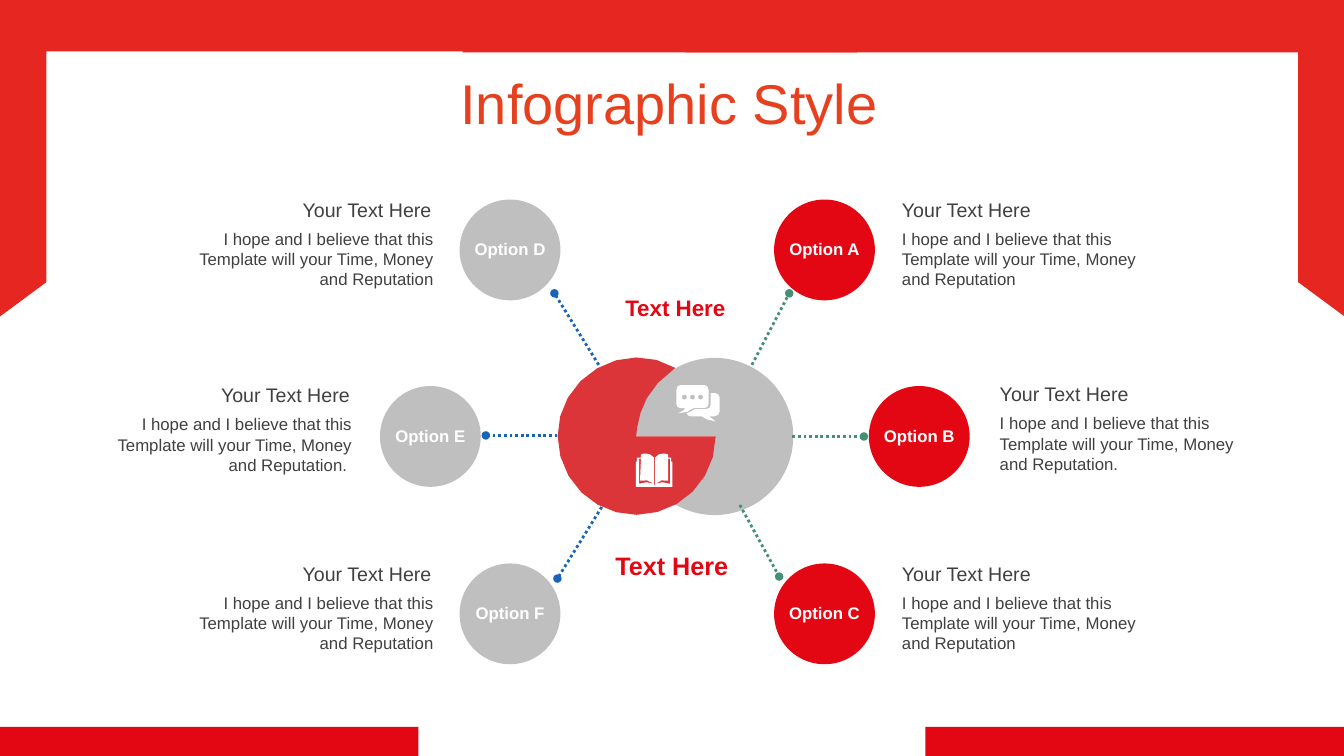
from lxml.etree import SubElement
from pptx import Presentation
from pptx.dml.color import RGBColor
from pptx.enum.dml import MSO_LINE
from pptx.enum.shapes import MSO_CONNECTOR, MSO_SHAPE
from pptx.enum.text import MSO_ANCHOR, MSO_AUTO_SIZE, PP_ALIGN
from pptx.oxml.ns import qn
from pptx.util import Pt

PX = 9144  # EMU per px, 100 px to the inch
COLORS = {
    "frame": "E52621", "accent": "E30613", "title": "E7401E", "swirl": "DC3539",
    "gray": "BFBFBF", "text": "404040", "white": "FFFFFF",
    "blue": "1764B9", "green": "449074",
}
LEFT, CENTER, RIGHT = PP_ALIGN.LEFT, PP_ALIGN.CENTER, PP_ALIGN.RIGHT


def flatten(contour, curve_steps):
    """Turn points (x, y) and cubic curves (x1, y1, x2, y2, x, y) into points."""
    points = []
    for step in contour:
        if len(step) == 2:
            points.append(step)
            continue
        nodes = [points[-1], step[:2], step[2:4], step[4:]]
        for i in range(1, curve_steps + 1):
            t = i / curve_steps
            weights = ((1 - t) ** 3, 3 * t * (1 - t) ** 2, 3 * t * t * (1 - t), t ** 3)
            points.append(tuple(sum(w * node[axis] for w, node in zip(weights, nodes))
                                for axis in (0, 1)))
    return [(x * PX, y * PX) for x, y in points]


class SlideBuilder:
    font = "Arial"

    def __init__(self, slide):
        self.slide = slide

    def color(self, name):
        return RGBColor.from_string(COLORS[name])

    def paint(self, shape, fill):
        shape.shadow.inherit = False
        shape.fill.solid()
        shape.fill.fore_color.rgb = self.color(fill)
        shape.line.fill.background()
        return shape

    def preset(self, kind, x, y, width, height, fill):
        box = (v * PX for v in (x, y, width, height))
        return self.paint(self.slide.shapes.add_shape(kind, *box), fill)

    def outline(self, contours, fill, curve_steps=2):
        first, *rest = [flatten(contour, curve_steps) for contour in contours]
        builder = self.slide.shapes.build_freeform(*first[0], scale=1.0)
        builder.add_line_segments(first[1:], close=True)
        for points in rest:
            builder.move_to(*points[0])
            builder.add_line_segments(points[1:], close=True)
        return self.paint(builder.convert_to_shape(), fill)

    def text(self, words, x, y, width, height, size, color, align=LEFT,
             bold=False, group=None):
        parent = group or self.slide
        box = parent.shapes.add_textbox(*(v * PX for v in (x, y, width, height)))
        frame = box.text_frame
        frame.word_wrap = True
        frame.auto_size = MSO_AUTO_SIZE.SHAPE_TO_FIT_TEXT
        paragraph = frame.paragraphs[0]
        paragraph.alignment = align
        run = paragraph.add_run()
        run.text = words
        run.font.name, run.font.size, run.font.bold = self.font, Pt(size), bold
        run.font.color.rgb = self.color(color)
        return frame

    def dotted_line(self, x1, y1, x2, y2, color):
        ends = (v * PX for v in (x1, y1, x2, y2))
        link = self.slide.shapes.add_connector(MSO_CONNECTOR.STRAIGHT, *ends)
        link.line.color.rgb = self.color(color)
        link.line.width = Pt(2)
        link.line.dash_style = MSO_LINE.ROUND_DOT
        properties = link.element.spPr
        SubElement(properties.find(qn("a:ln")), qn("a:tailEnd"), type="oval")
        SubElement(properties, qn("a:effectLst"))

    def option(self, letter, x, y, fill):
        self.preset(MSO_SHAPE.OVAL, x, y, 100, 100, fill)
        self.text(f"Option {letter}", x + 3, y + 34, 94, 30, 12, "white", CENTER, True)

    def note(self, x, y, width, body_gap, ending, align):
        group = self.slide.shapes.add_group_shape()
        body = "I hope and I believe that this Template will your Time, Money and Reputation"
        self.text(body + ending, x, y + body_gap, width, 71, 12, "text", align, group=group)
        self.text("Your Text Here", x, y, width - 2, 34, 14, "text", align, group=group)


# Circle: letter, x, y, colour; then its note: x, y, width, gap to body, ending, alignment
OPTIONS = [
    (("A", 768, 198, "accent"), (885, 191, 258, 31, "", LEFT)),
    (("B", 862, 383, "accent"), (982, 374, 256, 31, ".", LEFT)),
    (("C", 768, 559, "accent"), (885, 553, 258, 30, "", LEFT)),
    (("D", 456, 198, "gray"), (182, 191, 258, 31, "", RIGHT)),
    (("E", 377, 383, "gray"), (103, 375, 256, 31, ". ", RIGHT)),
    (("F", 456, 559, "gray"), (182, 553, 258, 30, "", RIGHT)),
]
LINKS = [
    (594, 362, 550, 291, "blue"), (553, 432, 482, 432, "blue"), (597, 503, 553, 574, "blue"),
    (746, 362, 783, 291, "green"), (786, 433, 857, 433, "green"), (734, 501, 773, 572, "green"),
]
RED_SWIRL = [
    (710, 433), (710, 468, 686, 499, 652, 508), (618, 517, 582, 503, 564, 472),
    (546, 441, 551, 403, 576, 378), (601, 353, 640, 347, 670, 365),
    (635, 389, 633, 418, 631, 433),
]
BOOK = [
    (649, 481), (650, 481), (650, 480), (656, 479, 658, 477, 665, 480), (665, 455),
    (663, 455), (663, 477), (659, 475, 654, 477, 650, 480), (650, 454),
    (652, 451, 655, 450, 658, 450), (659, 450, 661, 450, 663, 451), (663, 454),
    (666, 454), (666, 458), (667, 458), (667, 483), (631, 483), (631, 458), (632, 458),
    (632, 454), (636, 454), (636, 451), (637, 450, 639, 450, 641, 450),
    (644, 450, 646, 451, 649, 454), (649, 480), (644, 477, 640, 475, 635, 477),
    (636, 455), (634, 455), (634, 480), (640, 477, 643, 479, 649, 480),
]
BACK_BUBBLE = [
    (705, 390), (709, 390), (712, 390, 714, 392, 714, 394), (714, 408),
    (714, 411, 712, 413, 709, 413), (704, 413), (705, 414, 705, 415, 710, 418),
    (702, 417, 700, 416, 696, 413), (685, 413), (684, 413, 682, 412, 681, 410),
    (684, 409, 687, 408, 689, 406), (700, 406), (703, 406, 705, 404, 705, 402),
]
FRONT_BUBBLE = [
    (675, 382), (699, 382), (701, 382, 703, 384, 703, 387), (703, 401),
    (703, 403, 701, 405, 699, 405), (688, 405), (683, 409, 681, 409, 673, 410),
    (678, 407, 678, 408, 680, 405), (675, 405), (673, 405, 671, 403, 671, 401),
    (671, 387), (671, 384, 673, 382, 675, 382),
]
BUBBLE_DOTS = [
    [(x, 391.5), (x + 1.4, 391.5, x + 2.5, 392.6, x + 2.5, 394),
     (x + 2.5, 395.4, x + 1.4, 396.5, x, 396.5),
     (x - 1.4, 396.5, x - 2.5, 395.4, x - 2.5, 394),
     (x - 2.5, 392.6, x - 1.4, 391.5, x, 391.5)]
    for x in (679, 687, 695)
]


def main():
    deck = Presentation()
    deck.slide_width, deck.slide_height = 12192000, 750 * PX
    page = SlideBuilder(deck.slides.add_slide(deck.slide_layouts[6]))

    # Red frame
    for x, width in ((0, 415), (918, 416)):
        page.preset(MSO_SHAPE.RECTANGLE, x, 721, width, 31, "accent")
    page.outline([[(1288, 280), (1334, 314), (1334, 0), (680, 0), (680, 52), (1288, 52)]],
                 "frame")
    page.outline([[(46, 280), (0, 314), (0, 0), (654, 0), (654, 51), (46, 51)]], "frame")
    page.preset(MSO_SHAPE.RECTANGLE, 459, 0, 391, 52, "frame")

    # Title
    title = page.text("Infographic Style", 87, 66, 1153, 79, 40, "title", CENTER)
    title.auto_size = MSO_AUTO_SIZE.NONE
    title.vertical_anchor = MSO_ANCHOR.MIDDLE
    title.paragraphs[0].line_spacing = 0.9
    title.paragraphs[0].space_before = Pt(10)

    # Interlocked circles with their captions
    gray_swirl = page.preset(MSO_SHAPE.PIE, 631, 355, 156, 156, "gray")
    gray_swirl.rotation = 180
    gray_swirl.adjustments[0] = 0
    gray_swirl.adjustments[1] = 180.48
    page.outline([RED_SWIRL], "swirl", curve_steps=5)
    page.text("Text Here", 606, 287, 128, 37, 16, "accent", CENTER, True)
    page.text("Text Here", 599, 541, 135, 40, 18, "accent", CENTER, True)

    # Options, links and notes
    for circle, note in OPTIONS:
        page.option(*circle)
        page.note(*note)
    for link in LINKS:
        page.dotted_line(*link)

    # Icons
    page.outline([BOOK], "white")
    page.outline([*BUBBLE_DOTS, BACK_BUBBLE, FRONT_BUBBLE], "white")

    deck.save("out.pptx")


if __name__ == "__main__":
    main()
